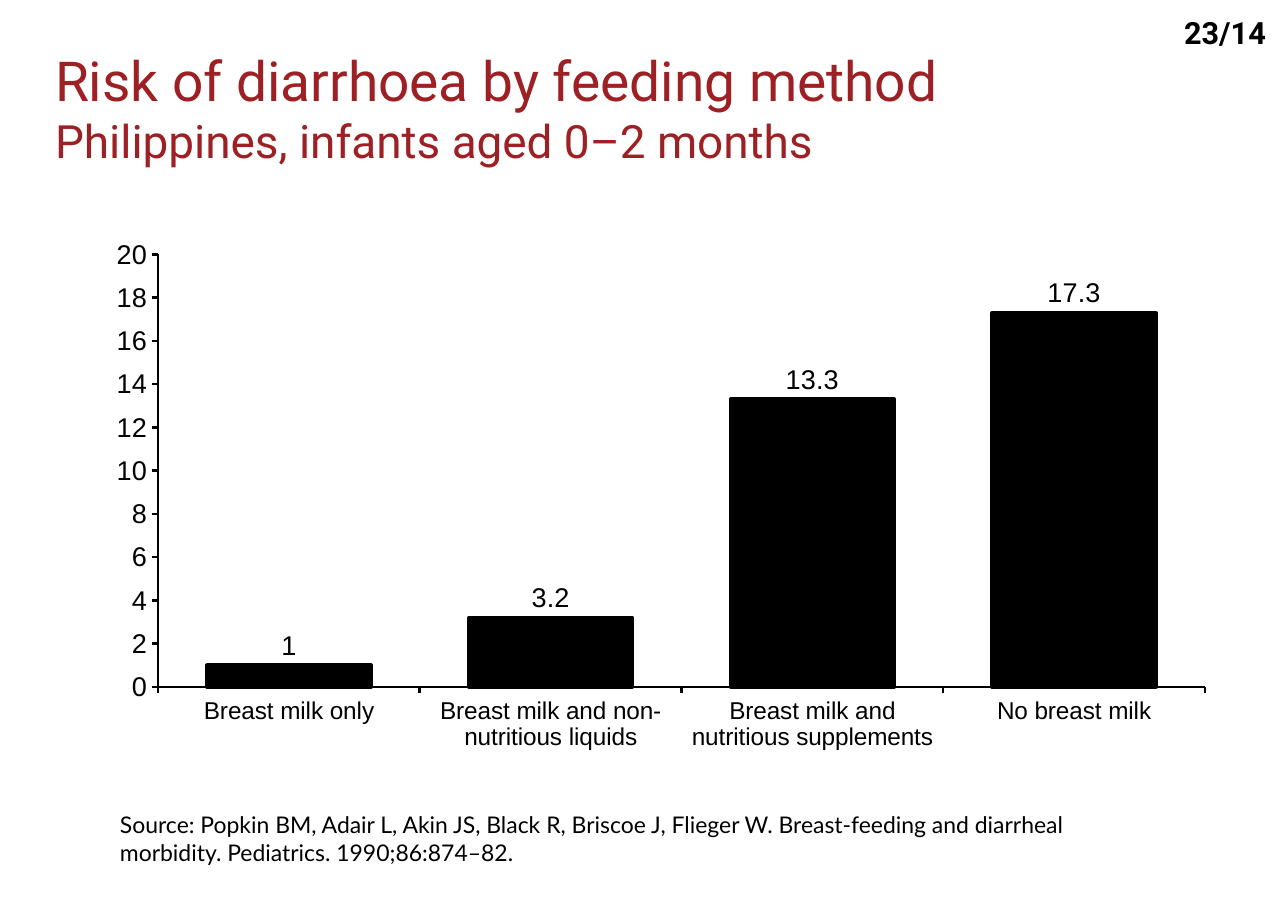
from dataclasses import dataclass

from lxml.etree import SubElement
from pptx import Presentation
from pptx.chart.axis import _BaseAxis as Axis
from pptx.chart.chart import Chart
from pptx.chart.data import CategoryChartData as ChartData
from pptx.dml.color import RGBColor as RGB
from pptx.enum.chart import XL_CHART_TYPE as ChartType
from pptx.enum.chart import XL_LABEL_POSITION as LabelPos
from pptx.enum.chart import XL_TICK_MARK as Tick
from pptx.enum.text import PP_ALIGN as Align
from pptx.oxml.ns import qn
from pptx.slide import Slide
from pptx.text.text import Font
from pptx.util import Inches, Pt


@dataclass(frozen=True)
class Theme:
    """Colours, fonts and type sizes of the slide."""
    ink: RGB = RGB(0, 0, 0)
    red: RGB = RGB(0x9D, 0x20, 0x24)
    heading: str = "Roboto"
    body: str = "Lato"
    chart: str = "Arial"
    title: float = 36
    subtitle: float = 30
    number: float = 20
    source: float = 15
    category: float = 15.9
    value: float = 17.7
    axis_line: float = 1.77
    bar_line: float = 2.66


THEME = Theme()


@dataclass(frozen=True)
class Line:
    """A line of text and its size."""
    text: str
    size: float


@dataclass(frozen=True)
class TextBlock:
    """A text box holding one paragraph."""
    box: tuple[float, float, float, float]
    lines: tuple[Line, ...]
    font: str
    color: RGB
    bold: bool = False
    align: Align = Align.LEFT
    inset: tuple[float, float] = (0.11, 0.06)


BLOCKS = (
    TextBlock((0.39, 0.36, 10.97, 1.38),
              (Line("Risk of diarrhoea by feeding method", THEME.title),
               Line("Philippines, infants aged 0–2 months", THEME.subtitle)),
              THEME.heading, THEME.red),
    TextBlock((10.57, 0.07, 1.03, 0.45), (Line("23/14", THEME.number),),
              THEME.heading, THEME.ink, bold=True, align=Align.RIGHT),
    TextBlock((0.99, 7.31, 9.58, 0.61),
              (Line("Source: Popkin BM, Adair L, Akin JS, Black R, Briscoe J, "
                    "Flieger W. Breast-feeding and diarrheal morbidity. "
                    "Pediatrics. 1990;86:874–82.", THEME.source),),
              THEME.body, THEME.ink, inset=(0.1, 0.05)),
)

RISKS = {
    "Breast milk only": 1,
    "Breast milk and non-nutritious liquids": 3.2,
    "Breast milk and nutritious supplements": 13.3,
    "No breast milk": 17.3,
}
CHART_BOX = (0.69, 1.93, 10.35, 5.75)
PLOT = {"x": 0.072, "y": 0.066, "w": 0.918, "h": 0.683}


def set_font(font: Font, name: str, color: RGB, bold: bool = False) -> None:
    """Set the face, colour and weight of a font."""
    font.name, font.bold = name, bold
    font.color.rgb = color


def add_text(s: Slide, block: TextBlock) -> None:
    """Draw a text block."""
    tf = s.shapes.add_textbox(*map(Inches, block.box)).text_frame
    tf.word_wrap = True
    tf.margin_left = tf.margin_right = Inches(block.inset[0])
    tf.margin_top = tf.margin_bottom = Inches(block.inset[1])
    p = tf.paragraphs[0]
    p.alignment = block.align
    set_font(p.font, block.font, block.color, block.bold)
    p.font.size = Pt(block.lines[0].size)
    for i, line in enumerate(block.lines):
        if i:
            p.add_line_break()
        r = p.add_run()
        r.text = line.text
        if line.size != block.lines[0].size:
            r.font.size = Pt(line.size)


def style_axis(axis: Axis, size: float) -> None:
    """Give an axis its line, ticks and labels."""
    axis.has_major_gridlines = False
    axis.major_tick_mark, axis.minor_tick_mark = Tick.OUTSIDE, Tick.NONE
    axis.format.line.color.rgb = THEME.ink
    axis.format.line.width = Pt(THEME.axis_line)
    set_font(axis.tick_labels.font, THEME.chart, THEME.ink)
    axis.tick_labels.font.size = Pt(size)


def keep_labels_level(chart: Chart) -> None:
    """Keep category labels horizontal so that they wrap."""
    steps = ("c:catAx", "c:txPr", "a:bodyPr")
    body = chart.element.find(".//" + "/".join(map(qn, steps)))
    body.set("rot", "0")
    body.set("vert", "horz")


def place_plot(chart: Chart) -> None:
    """Fix the inner plot area as fractions of the chart."""
    area = chart.element.find(f".//{qn('c:plotArea')}")
    for old in area.findall(qn("c:layout")):
        area.remove(old)
    layout = SubElement(area, qn("c:layout"))
    area.insert(0, layout)
    manual = SubElement(layout, qn("c:manualLayout"))
    settings = {"layoutTarget": "inner", "xMode": "edge", "yMode": "edge", **PLOT}
    for tag, value in settings.items():
        SubElement(manual, qn(f"c:{tag}")).set("val", str(value))


def add_risk_chart(s: Slide) -> None:
    """Draw the column chart of risks."""
    data = ChartData()
    data.categories = list(RISKS)
    data.add_series("Series 1", list(RISKS.values()))
    chart = s.shapes.add_chart(
        ChartType.COLUMN_CLUSTERED, *map(Inches, CHART_BOX), data).chart
    chart.has_legend = chart.has_title = False
    set_font(chart.font, THEME.chart, THEME.ink)
    chart.font.size = Pt(THEME.category)
    style_axis(chart.category_axis, THEME.category)
    axis = chart.value_axis
    style_axis(axis, THEME.value)
    axis.minimum_scale, axis.maximum_scale, axis.major_unit = 0, 20, 2
    plot = chart.plots[0]
    plot.gap_width, plot.vary_by_categories = 60, False
    bars = plot.series[0]
    bars.format.fill.solid()
    bars.format.fill.fore_color.rgb = THEME.ink
    bars.format.line.color.rgb = THEME.ink
    bars.format.line.width = Pt(THEME.bar_line)
    labels = bars.data_labels
    labels.show_value, labels.position = True, LabelPos.OUTSIDE_END
    set_font(labels.font, THEME.chart, THEME.ink)
    labels.font.size = Pt(THEME.value)
    keep_labels_level(chart)
    place_plot(chart)


def main() -> None:
    """Build and save the slide."""
    prs = Presentation()
    prs.slide_width, prs.slide_height = Inches(11.69), Inches(8.27)
    s = prs.slides.add_slide(prs.slide_layouts[6])
    add_risk_chart(s)
    for block in BLOCKS:
        add_text(s, block)
    prs.save("out.pptx")


if __name__ == "__main__":
    main()
